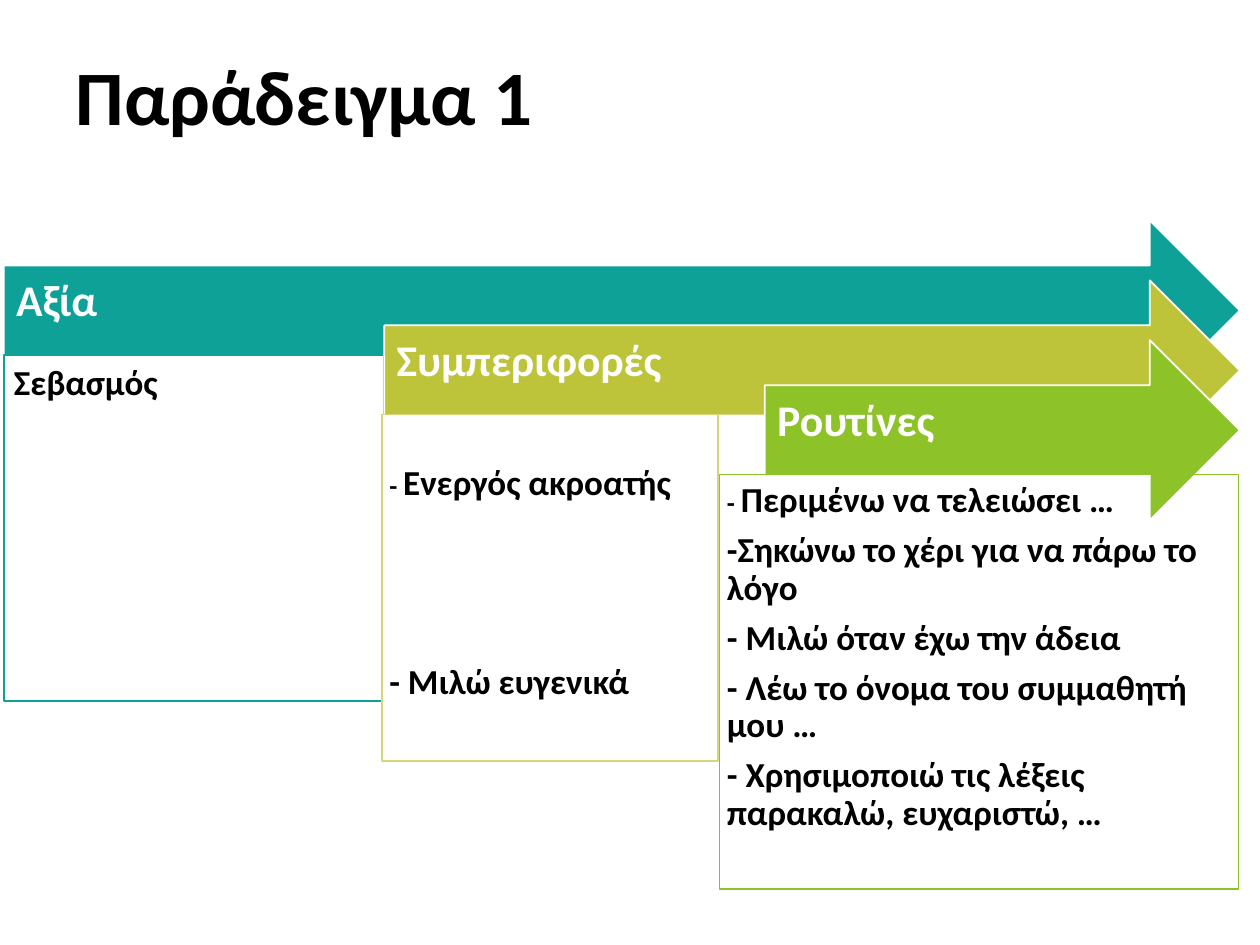
"""Build the slide that steps from a value to behaviours to routines."""
from dataclasses import dataclass

from pptx import Presentation
from pptx.dml.color import RGBColor
from pptx.enum.shapes import MSO_SHAPE as Preset
from pptx.enum.text import MSO_ANCHOR as Anchor, PP_ALIGN as Align
from pptx.shapes.autoshape import Shape
from pptx.slide import Slide
from pptx.text.text import TextFrame, _Paragraph as Paragraph
from pptx.util import Inches, Pt


@dataclass(frozen=True)
class Theme:
    font: str = "Calibri"
    ink: str = "000000"
    paper: str = "FFFFFF"
    teal: str = "0DA197"
    olive: str = "BDC439"
    pale_olive: str = "D3D87A"
    green: str = "8DC228"
    title_size: int = 44
    heading_size: int = 25
    body_size: int = 20
    dash_size: int = 15
    line_width: int = 1
    line_spacing: float = 0.9
    space_after: int = 7


@dataclass(frozen=True)
class Grid:
    cell: float = 0.1
    columns: int = 100
    rows: int = 75

    def span(self, cells: float) -> int:
        """Return the length of a number of cells."""
        return Inches(cells * self.cell)


@dataclass(frozen=True)
class Area:
    left: float
    top: float
    width: float
    height: float


@dataclass(frozen=True)
class Stage:
    heading: str
    items: tuple[str, ...]
    colour: str
    outline: str
    box_left: float
    box_width: float
    box_height: float
    inset: float
    top_inset: float
    item_gap: int = 0
    small_dash: bool = False
    filled: bool = True


THEME = Theme()
GRID = Grid()
ARROW_LEFT, ARROW_TOP, ARROW_RIGHT, ARROW_HEIGHT = 0.3, 17.5, 98.4, 14.3
STEP_RIGHT, STEP_DOWN, BOX_DROP = 30.2, 4.75, 10.65

STAGES = (
    Stage("Αξία", ("Σεβασμός",), THEME.teal, THEME.teal,
          0.3, 30.2, 27.5, 0.8, 0.8),
    Stage("Συμπεριφορές", ("- Ενεργός ακροατής", "- Μιλώ ευγενικά"),
          THEME.olive, THEME.pale_olive, 30.3, 26.7, 27.5, 0.6, 4,
          item_gap=85, small_dash=True),
    Stage("Ρουτίνες",
          ("- Περιμένω να τελειώσει …",
           "-Σηκώνω το χέρι για να πάρω το λόγο",
           "- Μιλώ όταν έχω την άδεια",
           "- Λέω το όνομα του συμμαθητή μου …",
           "- Χρησιμοποιώ τις λέξεις παρακαλώ, ευχαριστώ, …"),
          THEME.green, THEME.green, 57.1, 41.2, 32.9, 0.6, 0.6,
          small_dash=True, filled=False),
)


def style(paragraph: Paragraph, size: int, colour: str) -> None:
    """Give a paragraph the theme's font and spacing."""
    paragraph.alignment = Align.LEFT
    paragraph.line_spacing = THEME.line_spacing
    paragraph.space_after = Pt(THEME.space_after)
    font = paragraph.font
    font.name, font.size, font.bold = THEME.font, Pt(size), True
    font.color.rgb = RGBColor.from_string(colour)


def set_insets(frame: TextFrame, left: float, top: float,
               right: float, bottom: float) -> None:
    """Set the four margins of a text frame in grid cells."""
    frame.margin_left, frame.margin_top = GRID.span(left), GRID.span(top)
    frame.margin_right, frame.margin_bottom = GRID.span(right), GRID.span(bottom)


def place(shape: Shape, area: Area) -> None:
    """Move and size a shape on the grid."""
    shape.left, shape.top = GRID.span(area.left), GRID.span(area.top)
    shape.width, shape.height = GRID.span(area.width), GRID.span(area.height)


def add_panel(slide: Slide, preset: Preset, area: Area,
              fill: str | None, outline: str) -> Shape:
    """Add a flat outlined shape with wrapping text."""
    panel = slide.shapes.add_shape(preset, 0, 0, 0, 0)
    place(panel, area)
    panel.shadow.inherit = False
    if fill:
        panel.fill.solid()
        panel.fill.fore_color.rgb = RGBColor.from_string(fill)
    else:
        panel.fill.background()
    panel.line.color.rgb = RGBColor.from_string(outline)
    panel.line.width = Pt(THEME.line_width)
    panel.text_frame.word_wrap = True
    return panel


def add_arrow(slide: Slide, stage: Stage, left: float, top: float) -> None:
    """Add a stage's arrow with its heading."""
    area = Area(left, top, ARROW_RIGHT - left, ARROW_HEIGHT)
    arrow = add_panel(slide, Preset.RIGHT_ARROW, area, stage.colour, THEME.paper)
    frame = arrow.text_frame
    frame.vertical_anchor = Anchor.MIDDLE
    set_insets(frame, 1, 1, 2.8, 2.3)
    frame.text = stage.heading
    style(frame.paragraphs[0], THEME.heading_size, THEME.paper)


def add_box(slide: Slide, stage: Stage, top: float) -> None:
    """Add the box that lists a stage's items."""
    area = Area(stage.box_left, top, stage.box_width, stage.box_height)
    fill = THEME.paper if stage.filled else None
    frame = add_panel(slide, Preset.RECTANGLE, area, fill, stage.outline).text_frame
    frame.vertical_anchor = Anchor.TOP
    set_insets(frame, stage.inset, stage.top_inset, stage.inset, stage.inset)
    for index, item in enumerate(stage.items):
        paragraph = frame.add_paragraph() if index else frame.paragraphs[0]
        style(paragraph, THEME.body_size, THEME.ink)
        if index:
            paragraph.space_before = Pt(stage.item_gap)
        elif stage.small_dash:
            dash = paragraph.add_run()
            dash.text, item = item[:2], item[2:]
            dash.font.size = Pt(THEME.dash_size)
        paragraph.add_run().text = item


def add_title(slide: Slide, wording: str) -> None:
    """Fill and format the title placeholder."""
    title = slide.shapes.title
    place(title, Area(5, 4.2, 90, 10.8))
    frame = title.text_frame
    frame.vertical_anchor = Anchor.TOP
    frame.text = wording
    style(frame.paragraphs[0], THEME.title_size, THEME.ink)


def main() -> None:
    """Draw the slide and save it."""
    deck = Presentation()
    deck.slide_width = GRID.span(GRID.columns)
    deck.slide_height = GRID.span(GRID.rows)
    slide = deck.slides.add_slide(deck.slide_layouts[5])
    add_title(slide, "Παράδειγμα 1")
    for index, stage in enumerate(STAGES):
        top = ARROW_TOP + index * STEP_DOWN
        add_arrow(slide, stage, ARROW_LEFT + index * STEP_RIGHT, top)
        add_box(slide, stage, top + BOX_DROP)
    deck.save("out.pptx")


if __name__ == "__main__":
    main()
